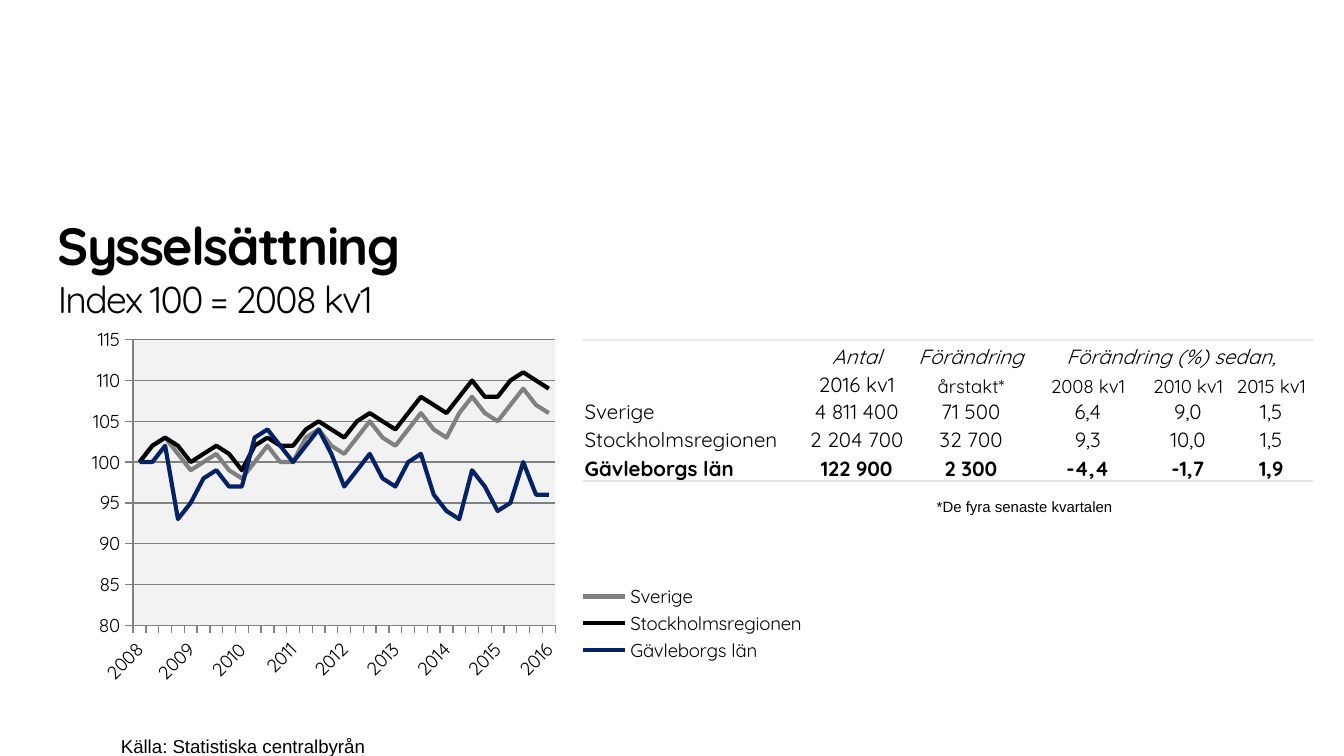
from dataclasses import dataclass

from lxml import etree
from pptx import Presentation
from pptx import util as u
from pptx.chart import data as chart_data
from pptx.dml import color
from pptx.enum import chart as ch, text as tx
from pptx.oxml import ns


@dataclass(frozen=True)
class Theme:
    font: str = "Quicksand"
    note_font: str = "Arial"
    ink: str = "000000"
    grey: str = "808080"
    navy: str = "052364"
    plot: str = "F2F2F2"
    rule: str = "E6E6E6"
    title: float = 28
    subtitle: float = 20
    body: float = 11
    small: float = 10
    footnote: float = 8


@dataclass(frozen=True)
class Box:
    left: float
    top: float
    width: float
    height: float

    def lengths(self) -> list:
        return [u.Inches(v) for v in (self.left, self.top, self.width, self.height)]


@dataclass(frozen=True)
class Note:
    text: str
    box: Box
    size: float


@dataclass(frozen=True)
class Region:
    name: str
    color: str
    index: list
    figures: list


THEME = Theme()
RGB = color.RGBColor.from_string
PLAIN_TABLE = "{2D5ABB26-0587-4C30-8999-92F81FD0307C}"  # "No Style, No Grid"

REGIONS = [
    Region("Sverige", THEME.grey,
           [100, 102, 103, 101, 99, 100, 101, 99, 98, 100, 102, 100, 100, 103, 104, 102, 101,
            103, 105, 103, 102, 104, 106, 104, 103, 106, 108, 106, 105, 107, 109, 107, 106],
           ["4 811 400", "71 500", "6,4", "9,0", "1,5"]),
    Region("Stockholmsregionen", THEME.ink,
           [100, 102, 103, 102, 100, 101, 102, 101, 99, 102, 103, 102, 102, 104, 105, 104, 103,
            105, 106, 105, 104, 106, 108, 107, 106, 108, 110, 108, 108, 110, 111, 110, 109],
           ["2 204 700", "32 700", "9,3", "10,0", "1,5"]),
    Region("Gävleborgs län", THEME.navy,
           [100, 100, 102, 93, 95, 98, 99, 97, 97, 103, 104, 102, 100, 102, 104, 101, 97,
            99, 101, 98, 97, 100, 101, 96, 94, 93, 99, 97, 94, 95, 100, 96, 96],
           ["122 900", "2 300", "-4,4", "-1,7", "1,9"]),
]
QUARTERS = [str(2008 + n // 4) if n % 4 == 0 else "" for n in range(33)]
HEADINGS = [
    ["", "Antal", "Förändring", "Förändring (%) sedan,", "", ""],
    ["", "2016 kv1", "årstakt*", "2008 kv1", "2010 kv1", "2015 kv1"],
]
COLUMNS = [1.62, 0.83, 0.87, 0.87, 0.62, 0.62]
ROWS = [0.22, 0.21, 0.2, 0.21, 0.21]
NOTES = [
    Note("Källa: Statistiska centralbyrån", Box(0.9, 5.3, 1, 0.42), THEME.small),
    Note("*De fyra senaste kvartalen", Box(6.97, 3.5, 1, 1), THEME.footnote),
]


def style(font, size: float, name: str = THEME.font, bold: bool = False,
          italic: bool = False) -> None:
    font.name, font.size, font.bold, font.italic = name, u.Pt(size), bold, italic
    font.color.rgb = RGB(THEME.ink)


def set_frame(frame) -> None:
    frame.margin_left = frame.margin_right = frame.margin_top = frame.margin_bottom = 0
    frame.auto_size = tx.MSO_AUTO_SIZE.NONE
    frame.vertical_anchor = tx.MSO_ANCHOR.TOP


def add_title(slide) -> None:
    title = slide.shapes.title
    title.left, title.top, title.width, title.height = Box(0.43, 1.59, 6.21, 0.8).lengths()
    frame = title.text_frame
    set_frame(frame)
    frame.text = "Sysselsättning\vIndex 100 = 2008 kv1"
    para = frame.paragraphs[0]
    para.alignment = tx.PP_ALIGN.LEFT
    for span, size, bold in zip(para.runs, (THEME.title, THEME.subtitle), (True, False)):
        style(span.font, size, bold=bold)
        span.font._element.set("spc", "-90")


def add_note(slide, note: Note) -> None:
    frame = slide.shapes.add_textbox(*note.box.lengths()).text_frame
    set_frame(frame)
    frame.word_wrap = False
    frame.text = note.text
    para = frame.paragraphs[0]
    para.line_spacing = u.Pt(24)
    style(para.runs[0].font, note.size, THEME.note_font)


def add_rule(cell, side: str) -> None:
    """Draw a thin line on one side (lnT or lnB) of a cell."""
    line = etree.Element(ns.qn(f"a:{side}"), w=str(u.Pt(1)))
    fill = etree.SubElement(line, ns.qn("a:solidFill"))
    etree.SubElement(fill, ns.qn("a:srgbClr"), val=THEME.rule)
    cell._tc.get_or_add_tcPr().insert(0, line)


def fill_cell(cell, text: str, row: int, column: int) -> None:
    cell.fill.background()
    cell.vertical_anchor = tx.MSO_ANCHOR.BOTTOM
    cell.margin_left = cell.margin_right = cell.margin_top = u.Inches(0.01)
    cell.margin_bottom = 0
    para = cell.text_frame.paragraphs[0]
    if text:
        para.text = text
        para.alignment = tx.PP_ALIGN.CENTER if column else tx.PP_ALIGN.LEFT
        size = THEME.small if row == 1 and column > 1 else THEME.body
        style(para.runs[0].font, size, bold=row == len(ROWS) - 1, italic=row == 0)
    else:
        # Keeps empty cells from stretching their row
        para._p.get_or_add_endParaRPr().set("sz", str(int(THEME.small * 100)))
    if row == 0:
        add_rule(cell, "lnT")
    elif row == len(ROWS) - 1:
        add_rule(cell, "lnB")


def add_figures(slide) -> None:
    box = Box(4.34, 2.53, 5.42, 1.05)
    table = slide.shapes.add_table(len(ROWS), len(COLUMNS), *box.lengths()).table
    table.first_row = table.horz_banding = False
    table._tbl.tblPr.find(ns.qn("a:tableStyleId")).text = PLAIN_TABLE
    for column, width in zip(table.columns, COLUMNS):
        column.width = u.Inches(width)
    for row, height in zip(table.rows, ROWS):
        row.height = u.Inches(height)
    contents = HEADINGS + [[region.name, *region.figures] for region in REGIONS]
    for r, texts in enumerate(contents):
        for c, text in enumerate(texts):
            fill_cell(table.cell(r, c), text, r, c)
    table.cell(0, 3).merge(table.cell(0, 5))


def make_layout(area: Box, inner: bool = False):
    """Manual chart layout, as fractions of the chart."""
    layout = etree.Element(ns.qn("c:layout"))
    manual = etree.SubElement(layout, ns.qn("c:manualLayout"))
    values = {"layoutTarget": "inner"} if inner else {}
    values |= {"xMode": "edge", "yMode": "edge", "x": area.left, "y": area.top,
               "w": area.width, "h": area.height}
    for tag, value in values.items():
        etree.SubElement(manual, ns.qn(f"c:{tag}"), val=str(value))
    return layout


def add_index_chart(slide) -> None:
    data = chart_data.CategoryChartData(number_format="0")
    data.categories = QUARTERS
    for region in REGIONS:
        data.add_series(region.name, region.index)
    box = Box(0.55, 2.39, 5.51, 2.76)
    chart = slide.shapes.add_chart(ch.XL_CHART_TYPE.LINE, *box.lengths(), data).chart
    chart.has_title = False
    style(chart.font, THEME.small)

    # Series
    chart.plots[0].vary_by_categories = False
    for series, region in zip(chart.plots[0].series, REGIONS):
        series.smooth = False
        series.marker.style = ch.XL_MARKER_STYLE.NONE
        series.format.line.width = u.Pt(2.25)
        series.format.line.color.rgb = RGB(region.color)

    # Axes
    values, quarters = chart.value_axis, chart.category_axis
    values.minimum_scale, values.maximum_scale, values.major_unit = 80, 115, 5
    values.has_major_gridlines = True
    values.tick_labels.number_format = "#,##0"
    values.tick_labels.number_format_is_linked = False
    for axis in (values, quarters):
        axis.major_tick_mark = ch.XL_TICK_MARK.OUTSIDE
    for lines in (values, quarters, values.major_gridlines):
        lines.format.line.width = u.Pt(0.75)
        lines.format.line.color.rgb = RGB(THEME.grey)
    style(quarters.tick_labels.font, THEME.small)
    quarters._element.find(ns.qn("c:txPr")).find(ns.qn("a:bodyPr")).set("rot", "-2700000")
    no_multi = quarters._element.find(ns.qn("c:noMultiLvlLbl"))
    for tag in ("tickLblSkip", "tickMarkSkip"):
        no_multi.addprevious(etree.Element(ns.qn(f"c:{tag}"), val="1"))

    # Plot area and legend
    area = chart._chartSpace.chart.plotArea
    for old in area.findall(ns.qn("c:layout")):
        area.remove(old)
    area.insert(0, make_layout(Box(0.08, 0.05, 0.57, 0.77), inner=True))
    shade = etree.SubElement(area, ns.qn("c:spPr"))
    fill = etree.SubElement(shade, ns.qn("a:solidFill"))
    etree.SubElement(fill, ns.qn("a:srgbClr"), val=THEME.plot)
    chart.has_legend = True
    chart.legend.position = ch.XL_LEGEND_POSITION.RIGHT
    chart.legend.include_in_layout = False
    style(chart.legend.font, THEME.small)
    legend = chart.legend._element
    for old in legend.findall(ns.qn("c:layout")):
        legend.remove(old)
    legend.find(ns.qn("c:legendPos")).addnext(make_layout(Box(0.68, 0.7, 0.31, 0.23)))


def main() -> None:
    deck = Presentation()
    # Widescreen, 16:9
    deck.slide_width = u.Inches(10)
    deck.slide_height = deck.slide_width * 9 // 16
    page = deck.slides.add_slide(deck.slide_layouts[5])
    add_title(page)
    add_figures(page)
    for note in NOTES:
        add_note(page, note)
    add_index_chart(page)
    deck.save("out.pptx")


if __name__ == "__main__":
    main()
